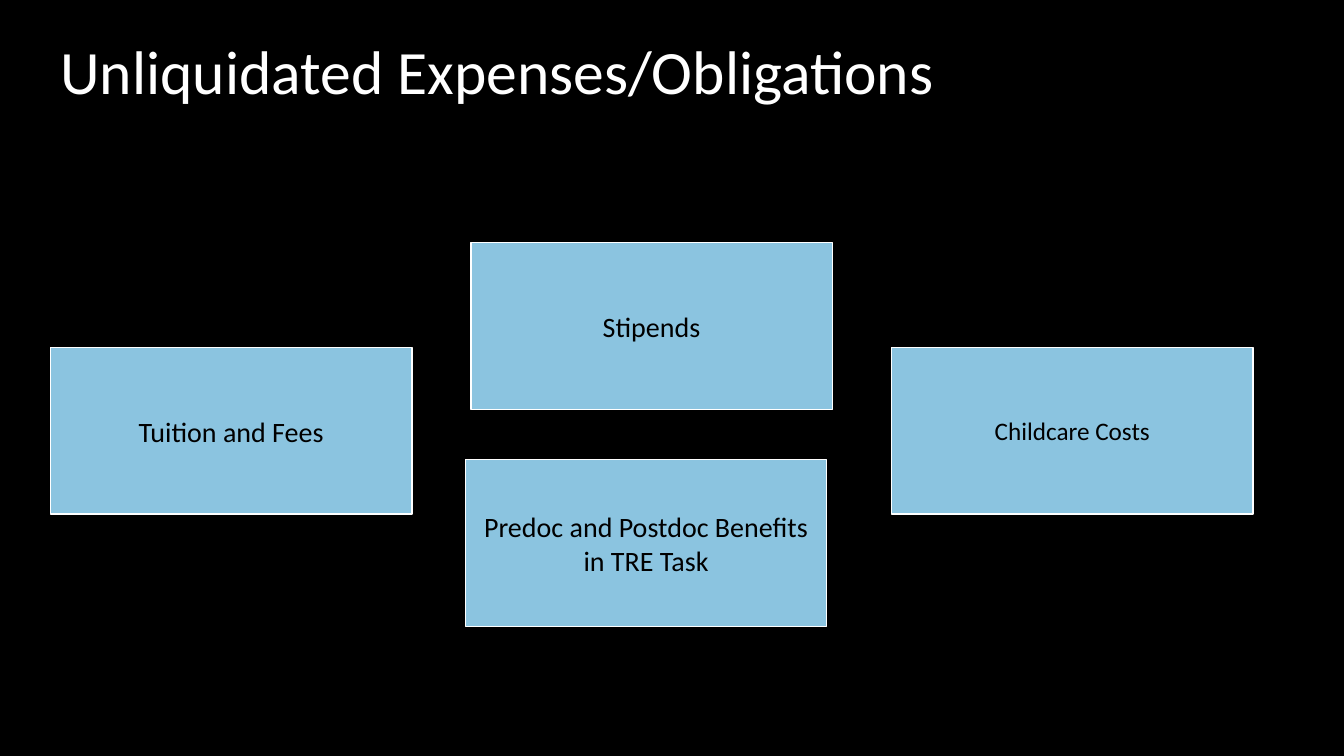
from dataclasses import dataclass

from pptx import Presentation
from pptx.dml.color import RGBColor
from pptx.enum.shapes import MSO_SHAPE as Shape
from pptx.enum.text import MSO_ANCHOR as Anchor, MSO_AUTO_SIZE as AutoSize, PP_ALIGN as Align
from pptx.util import Pt


@dataclass(frozen=True)
class Theme:
    font: str = "Calibri"
    background: RGBColor = RGBColor(0x00, 0x00, 0x00)
    title: RGBColor = RGBColor(0xFF, 0xFF, 0xFF)
    card_fill: RGBColor = RGBColor(0x8B, 0xC4, 0xE0)
    card_line: RGBColor = RGBColor(0xFF, 0xFF, 0xFF)
    card_text: RGBColor = RGBColor(0x00, 0x00, 0x00)
    title_size: int = 44
    card_size: int = 20
    small_card_size: int = 18


THEME = Theme()
CARD_WIDTH, CARD_HEIGHT = 258.2, 119

# Label, offset from the left and top of the card area, text size
CARDS = [
    ("Tuition and Fees", 0, 74.9, THEME.card_size),
    ("Predoc and Postdoc Benefits in TRE Task", 296.4, 155, THEME.card_size),
    ("Childcare Costs", 600.9, 74.9, THEME.small_card_size),
    ("Stipends", 300.3, 0, THEME.card_size),
]


def place(shape, left, top, width, height):
    shape.left, shape.top = Pt(left), Pt(top)
    shape.width, shape.height = Pt(width), Pt(height)


def format_text(text_frame, size, color, align):
    text_frame.word_wrap = True
    text_frame.auto_size = AutoSize.NONE
    text_frame.vertical_anchor = Anchor.MIDDLE
    for paragraph in text_frame.paragraphs:
        paragraph.alignment = align
        for run in paragraph.runs:
            run.font.name = THEME.font
            run.font.size = Pt(size)
            run.font.color.rgb = color


def add_title(slide, text, left, top, width, height):
    title = slide.shapes.title
    place(title, left, top, width, height)
    title.text_frame.text = text
    title.text_frame.paragraphs[0].line_spacing = 0.9
    format_text(title.text_frame, THEME.title_size, THEME.title, Align.LEFT)


def add_card(slide, text, size, left, top, width, height):
    card = slide.shapes.add_shape(Shape.RECTANGLE, Pt(left), Pt(top), Pt(width), Pt(height))
    card.shadow.inherit = False
    card.fill.solid()
    card.fill.fore_color.rgb = THEME.card_fill
    card.line.color.rgb = THEME.card_line
    card.line.width = Pt(1)
    text_frame = card.text_frame
    text_frame.margin_left = text_frame.margin_right = Pt(6.5)
    text_frame.margin_top = text_frame.margin_bottom = Pt(6.5)
    text_frame.text = text
    format_text(text_frame, size, THEME.card_text, Align.CENTER)


def add_cards(slide, left, top):
    for text, offset_x, offset_y, size in CARDS:
        add_card(slide, text, size, left + offset_x, top + offset_y, CARD_WIDTH, CARD_HEIGHT)


def main():
    presentation = Presentation()
    presentation.slide_width, presentation.slide_height = Pt(960), Pt(540)
    slide = presentation.slides.add_slide(presentation.slide_layouts[5])

    # Background
    slide.background.fill.solid()
    slide.background.fill.fore_color.rgb = THEME.background

    # Title and expense cards
    add_title(slide, "Unliquidated Expenses/Obligations", 36, 0.7, 804, 104.4)
    add_cards(slide, 36, 173.4)

    presentation.save("out.pptx")


if __name__ == "__main__":
    main()
